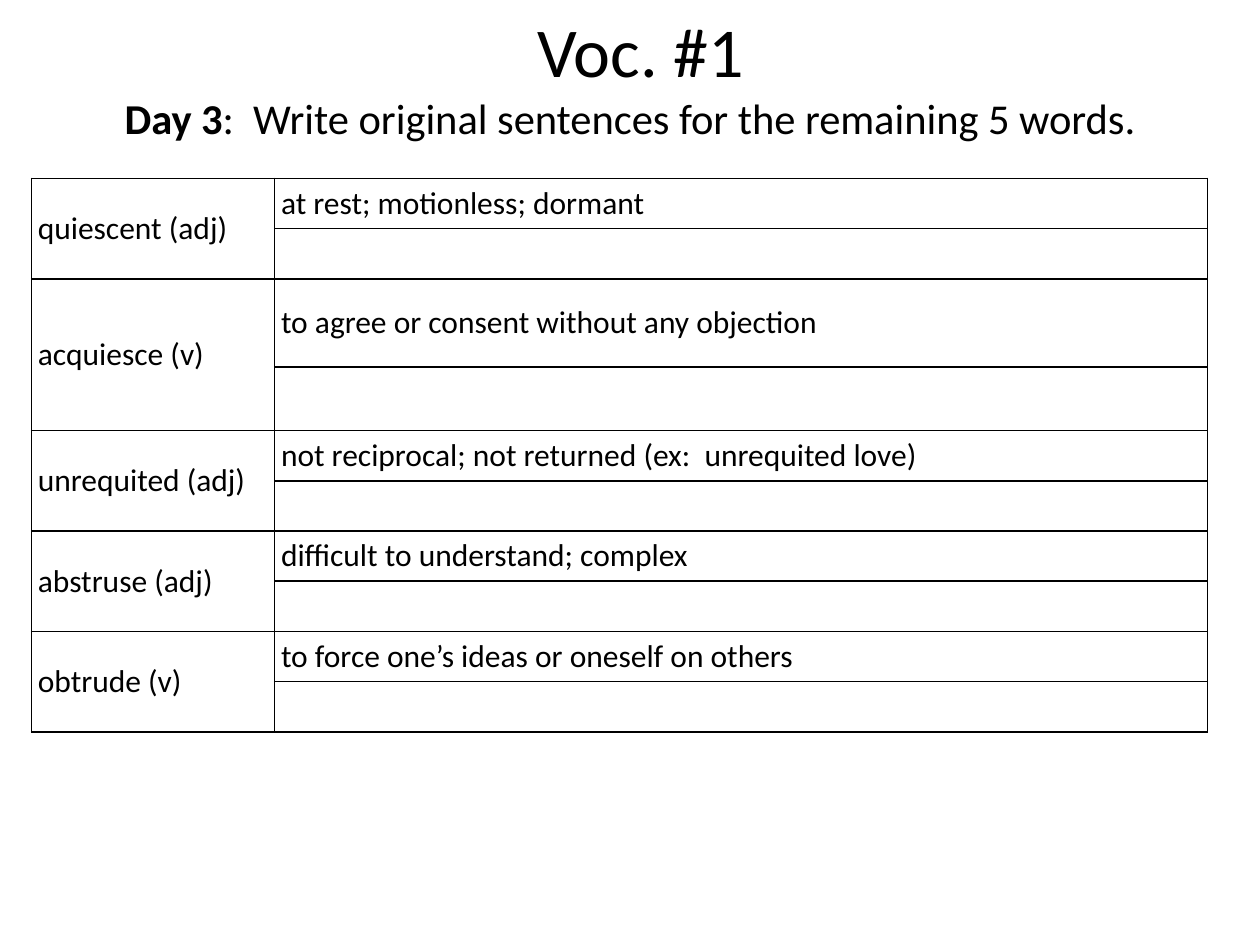
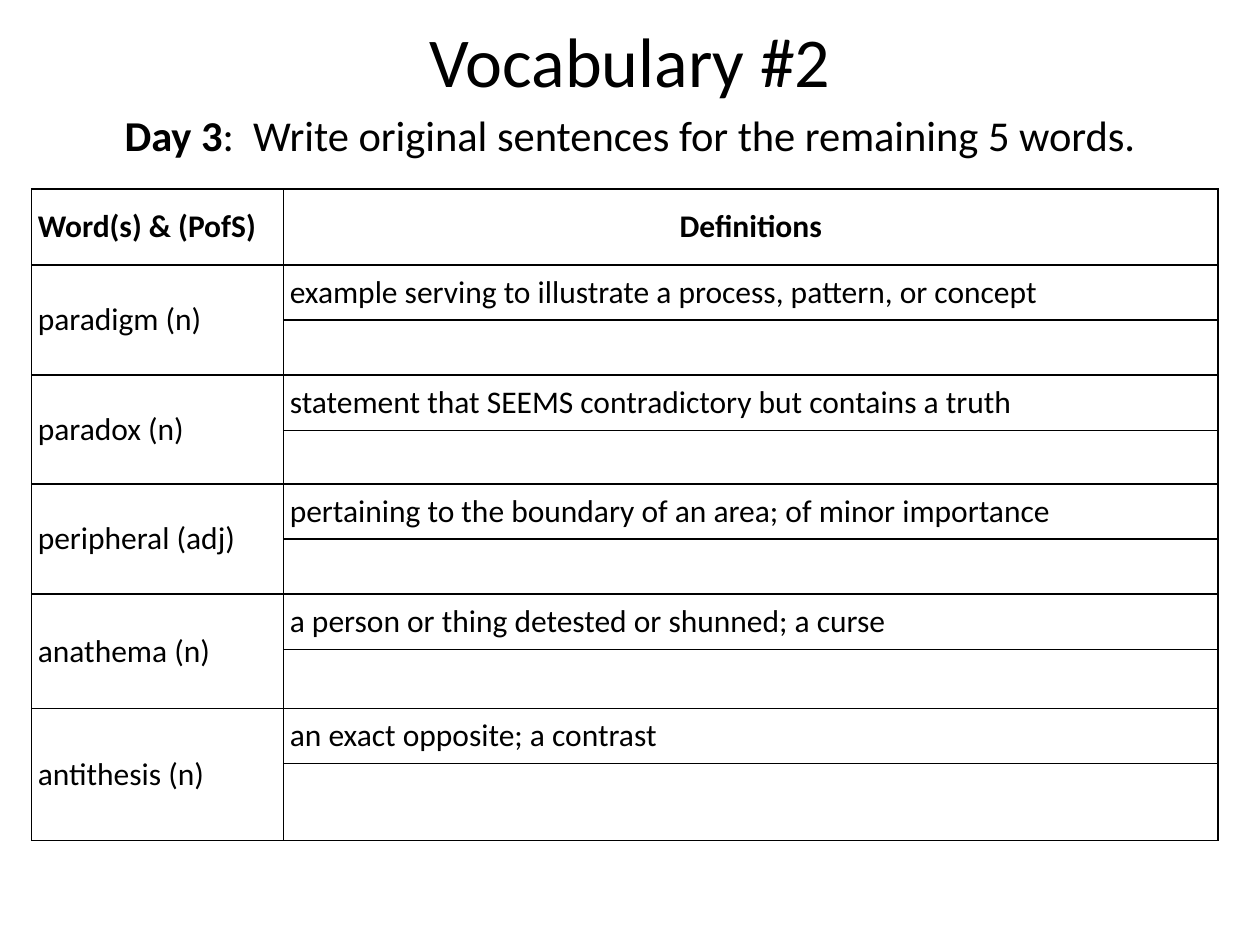
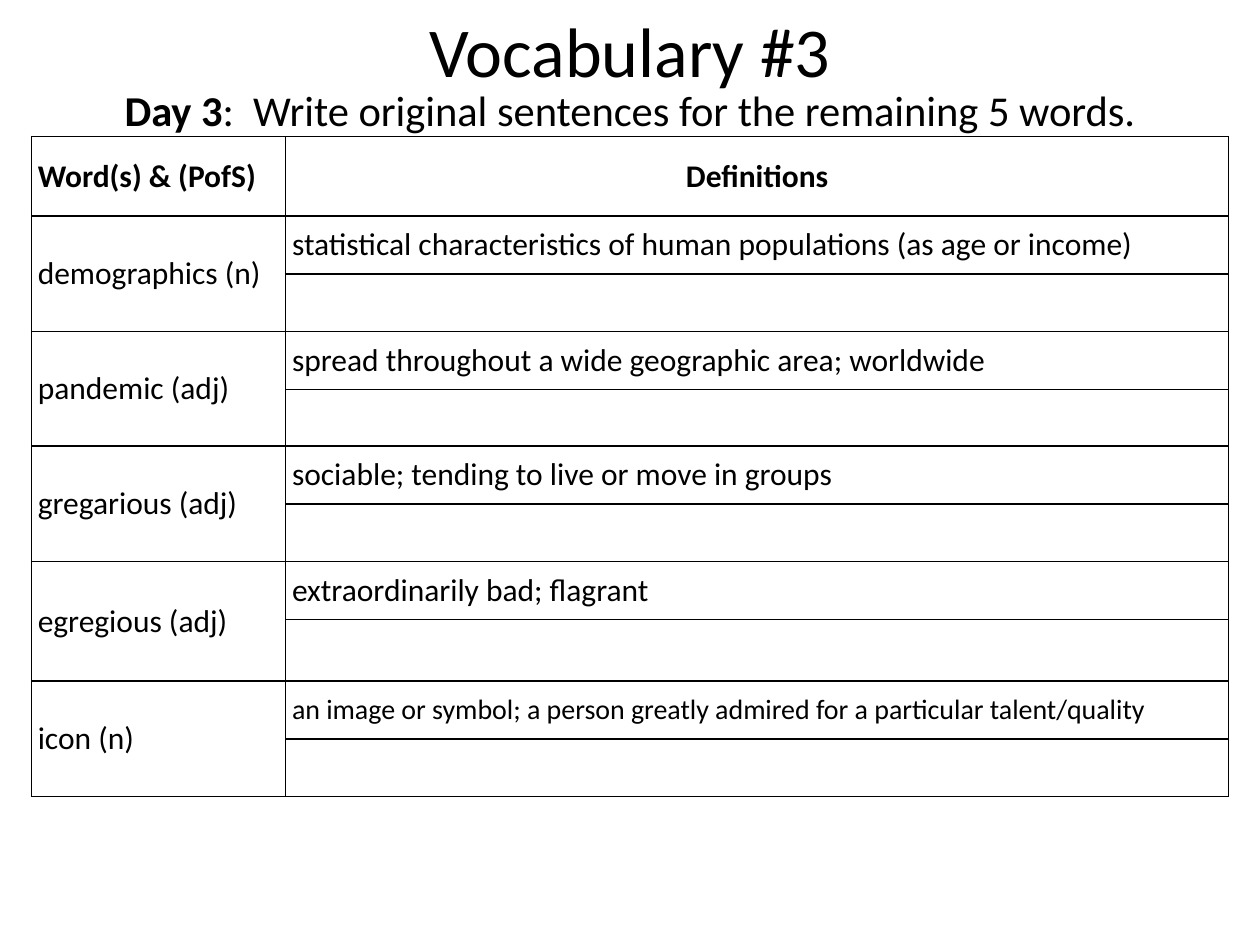
from lxml.etree import SubElement
from pptx import Presentation
from pptx.dml.color import RGBColor
from pptx.enum.text import MSO_ANCHOR, PP_ALIGN
from pptx.oxml.ns import qn
from pptx.util import Pt

FONT = "Calibri"
INK = "000000"
TITLE_SIZE, TASK_SIZE, CELL_SIZE = 40, 24.3, 18
TITLE_WIDTH, TITLE_HEIGHT = 648, 62.6
TABLE_LEFT = 18
CELL_INSET = 3.6
TASK = [("Day 3", True), (":  Write original sentences for the remaining 5 words.", False)]
HEADER = ("Word(s) & (PofS)", "Definitions")

# Boxes are (left, top, width, height); a drop is the space above the text.
LESSONS = [
    {
        "title": "Voc. #1", "title_left": 42, "title_drop": 4.2,
        "task_box": (24, 52.8, 672, 60), "task_drop": 0,
        "table_top": 102, "columns": (139, 533), "header_height": None,
        "words": [
            ("quiescent (adj)", "at rest; motionless; dormant"),
            ("acquiesce (v)", "to agree or consent without any objection"),
            ("unrequited (adj)", "not reciprocal; not returned (ex:  unrequited love)"),
            ("abstruse (adj)", "difficult to understand; complex"),
            ("obtrude (v)", "to force one’s ideas or oneself on others"),
        ],
        "row_height": 28.7, "special_heights": {2: 50.4, 3: 36.3},
    },
    {
        "title": "Vocabulary #2", "title_left": 36, "title_drop": 9.9,
        "task_box": (54, 48, 612, 54), "task_drop": 14,
        "table_top": 108, "columns": (144, 534), "header_height": 43.4,
        "words": [
            ("paradigm (n)", "example serving to illustrate a process, pattern, or concept"),
            ("paradox (n)", "statement that SEEMS contradictory but contains a truth"),
            ("peripheral (adj)", "pertaining to the boundary of an area; of minor importance"),
            ("anathema (n)", "a person or thing detested or shunned; a curse"),
            ("antithesis (n)", "an exact opposite; a contrast"),
        ],
        "row_height": 31.5, "special_heights": {3: 30.7, 7: 33.7, 9: 44},
    },
    {
        "title": "Vocabulary #3", "title_left": 36, "title_drop": 4.2,
        "task_box": (54, 31, 612, 60), "task_drop": 16.8,
        "table_top": 78, "columns": (145.3, 538.7), "header_height": 45.5,
        "words": [
            ("demographics (n)", "statistical characteristics of human populations (as age or income)"),
            ("pandemic (adj)", "spread throughout a wide geographic area; worldwide"),
            ("gregarious (adj)", "sociable; tending to live or move in groups"),
            ("egregious (adj)", "extraordinarily bad; flagrant"),
            ("icon (n)", "an image or symbol; a person greatly admired for a particular talent/quality"),
        ],
        "row_height": 33, "special_heights": {3: 32.4, 7: 35.3},
        "definition_sizes": {"icon (n)": 16},
    },
]


def color(value):
    return RGBColor.from_string(value)


def style(paragraph, size, alignment):
    paragraph.alignment = alignment
    paragraph.font.name = FONT
    paragraph.font.size = Pt(size)
    paragraph.font.color.rgb = color(INK)


def add_heading(slide, box, drop, runs, size):
    """Add a centred line of (text, bold) runs that starts `drop` below the box top."""
    frame = slide.shapes.add_textbox(*map(Pt, box)).text_frame
    frame.word_wrap = True
    frame.vertical_anchor = MSO_ANCHOR.TOP
    frame.margin_top = Pt(drop)
    frame.margin_bottom = 0
    paragraph = frame.paragraphs[0]
    style(paragraph, size, PP_ALIGN.CENTER)
    for text, bold in runs:
        run = paragraph.add_run()
        run.text = text
        run.font.bold = bold


def format_cell(cell):
    """Give a cell its insets, black borders and clear fill."""
    cell.margin_left = cell.margin_right = Pt(CELL_INSET)
    cell.margin_top = cell.margin_bottom = 0
    cell.vertical_anchor = MSO_ANCHOR.MIDDLE
    properties = cell._tc.get_or_add_tcPr()
    for side in ("lnL", "lnR", "lnT", "lnB"):
        line = SubElement(properties, qn(f"a:{side}"), w=str(Pt(1)))
        fill = SubElement(line, qn("a:solidFill"))
        SubElement(fill, qn("a:srgbClr"), val=INK)
    cell.fill.background()


def write_cell(cell, text, size=CELL_SIZE, bold=False, alignment=PP_ALIGN.LEFT):
    cell.text = text
    paragraph = cell.text_frame.paragraphs[0]
    style(paragraph, size, alignment)
    paragraph.font.bold = bold


def add_word_table(slide, lesson):
    """Add two rows a word: its definition, then room for a sentence."""
    words = lesson["words"]
    heights = [lesson["special_heights"].get(index, lesson["row_height"])
               for index in range(2 * len(words))]
    first_row = 0
    if lesson["header_height"]:
        heights.insert(0, lesson["header_height"])
        first_row = 1
    columns = lesson["columns"]
    table = slide.shapes.add_table(
        len(heights), len(columns), Pt(TABLE_LEFT), Pt(lesson["table_top"]),
        Pt(sum(columns)), Pt(sum(heights))).table
    table.first_row = table.horz_banding = False
    for column, width in zip(table.columns, columns):
        column.width = Pt(width)
    for row, height in zip(table.rows, heights):
        row.height = Pt(height)
    for cell in table.iter_cells():
        format_cell(cell)
        style(cell.text_frame.paragraphs[0], CELL_SIZE, PP_ALIGN.LEFT)

    if first_row:
        for column, alignment in enumerate((PP_ALIGN.LEFT, PP_ALIGN.CENTER)):
            write_cell(table.cell(0, column), HEADER[column], bold=True, alignment=alignment)
    sizes = lesson.get("definition_sizes", {})
    for index, (word, definition) in enumerate(words):
        row = first_row + 2 * index
        table.cell(row, 0).merge(table.cell(row + 1, 0))
        write_cell(table.cell(row, 0), word)
        write_cell(table.cell(row, 1), definition, sizes.get(word, CELL_SIZE))


def main():
    presentation = Presentation()
    presentation.slide_width = Pt(720)
    presentation.slide_height = Pt(540)
    for lesson in LESSONS:
        slide = presentation.slides.add_slide(presentation.slide_layouts[6])
        add_heading(slide, lesson["task_box"], lesson["task_drop"], TASK, TASK_SIZE)
        title_box = (lesson["title_left"], 0, TITLE_WIDTH, TITLE_HEIGHT)
        add_heading(slide, title_box, lesson["title_drop"],
                    [(lesson["title"], False)], TITLE_SIZE)
        add_word_table(slide, lesson)
    presentation.save("out.pptx")


if __name__ == "__main__":
    main()
